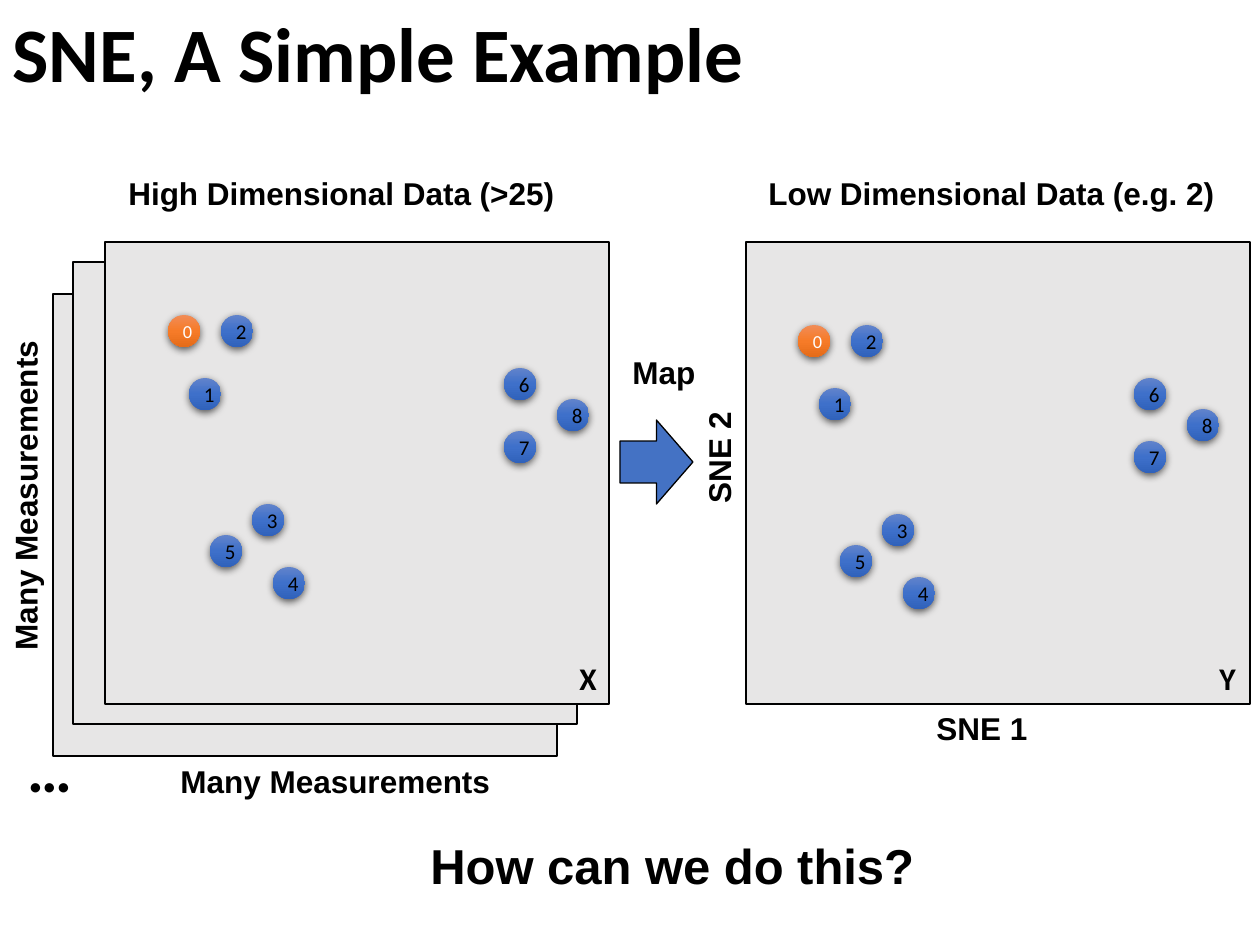
import copy

import pptx
import pptx.dml.color
import pptx.enum.shapes
import pptx.enum.text
import pptx.oxml
import pptx.oxml.ns
import pptx.util

SCALE = 914400 / 126  # EMU per px
SLIDE_SIZE = (1260, 945)

THEME = {
    "ink": "000000", "white": "FFFFFF", "panel": "E7E6E6", "arrow": "4472C4",
    "orange": ("F18C57", "F67B28", "E56C19"),
    "blue": ("6183CB", "3E70CA", "3062BB"),
    "title_size": 44, "question_size": 28, "label_size": 18, "dots_size": 36,
    "point_size": 12, "first_point_size": 10.5, "outline": 0.75,
    "heading_font": "Calibri", "label_font": "Arial",
}

TITLE = ("SNE, A Simple Example", (0, -1, 1134, 118))
PANEL_SIZE = (504, 462)
POINT_SIZE = 32
# Point label and its offset from point 0
POINTS = [
    ("0", 0, 0), ("5", 42, 220), ("2", 53, 0), ("3", 84, 189), ("4", 105, 252),
    ("6", 336, 53), ("7", 336, 116), ("8", 389, 84), ("1", 21, 63),
]
ARROW = (620, 420, 73, 84)

# Each label: text, box, rotation
LOW = {
    "panels": [(746, 242)], "first_point": (798, 325),
    "labels": [
        ("Low Dimensional Data (e.g. 2)", (756, 168, 476, 50), 0),
        ("SNE 1", (924, 703, 117, 50), 0),
        ("SNE 2", (660, 432, 117, 50), 270),
    ],
}
HIGH = {
    "panels": [(53, 294), (73, 262), (105, 242)], "first_point": (168, 315),
    "labels": [
        ("Many Measurements", (168, 756, 338, 50), 0),
        ("Many Measurements", (-144, 469, 338, 50), 270),
    ],
}
HIGH_HEADING = ("High Dimensional Data (>25)", (116, 168, 456, 50))
MAP_LABEL = ("Map", (620, 347, 89, 50))
QUESTION = ("How can we do this?", (418, 829, 515, 72))
MORE_PANELS = ("…", (15, 723, 71, 89))
PANEL_NAMES = [("X", (567, 653, 43, 50)), ("Y", (1207, 653, 42, 50))]


def emu(lengths):
    return [round(length * SCALE) for length in lengths]


def rgb(name):
    return pptx.dml.color.RGBColor.from_string(name)


def style_text(frame, size, font, color, bold):
    for run in frame.paragraphs[0].runs:
        run.font.size = pptx.util.Pt(size)
        run.font.name = font
        run.font.bold = bold
        run.font.color.rgb = rgb(color)


def add_label(shapes, text, box, rotation=0, size=THEME["label_size"],
              font=THEME["label_font"]):
    label = shapes.add_textbox(*emu(box))
    label.rotation = rotation
    frame = label.text_frame
    frame.text = text
    frame.word_wrap = False
    frame.auto_size = pptx.enum.text.MSO_AUTO_SIZE.SHAPE_TO_FIT_TEXT
    style_text(frame, size, font, THEME["ink"], True)


def add_outlined(shapes, kind, box, fill):
    outlined = shapes.add_shape(kind, *emu(box))
    outlined.shadow.inherit = False
    outlined.fill.solid()
    outlined.fill.fore_color.rgb = rgb(fill)
    outlined.line.color.rgb = rgb(THEME["ink"])
    outlined.line.width = pptx.util.Pt(THEME["outline"])


def fill_gradient(shape, colors):
    """Fill from top to bottom with evenly spaced colours."""
    shape.fill.gradient()
    shape.fill.gradient_angle = 270
    stop_list = shape._element.spPr.find(".//" + pptx.oxml.ns.qn("a:gsLst"))
    while len(stop_list) < len(colors):
        stop_list.append(copy.deepcopy(stop_list[0]))
    for index, (stop, color) in enumerate(zip(shape.fill.gradient_stops, colors)):
        stop.position = index / (len(colors) - 1)
        stop.color.rgb = rgb(color)


def add_drop_shadow(shape):
    shape.shadow.inherit = False
    effects = shape._element.spPr.find(pptx.oxml.ns.qn("a:effectLst"))
    effects.append(pptx.oxml.parse_xml(
        f'<a:outerShdw {pptx.oxml.ns.nsdecls("a")} blurRad="57150" dist="19050" '
        'dir="5400000" algn="ctr" rotWithShape="0">'
        f'<a:srgbClr val="{THEME["ink"]}"><a:alpha val="63000"/></a:srgbClr>'
        '</a:outerShdw>'))


def add_point(shapes, number, left, top):
    first = number == "0"
    point = shapes.add_shape(pptx.enum.shapes.MSO_SHAPE.OVAL,
                             *emu((left, top, POINT_SIZE, POINT_SIZE)))
    fill_gradient(point, THEME["orange" if first else "blue"])
    point.line.fill.background()
    add_drop_shadow(point)
    frame = point.text_frame
    frame.text = number
    frame.vertical_anchor = pptx.enum.text.MSO_ANCHOR.MIDDLE
    frame.paragraphs[0].alignment = pptx.enum.text.PP_ALIGN.CENTER
    style_text(frame, THEME["first_point_size" if first else "point_size"],
               THEME["heading_font"], THEME["white" if first else "ink"], False)


def add_space(shapes, space):
    """Draw one data space: its panels, points and labels."""
    for corner in space["panels"]:
        add_outlined(shapes, pptx.enum.shapes.MSO_SHAPE.RECTANGLE,
                     corner + PANEL_SIZE, THEME["panel"])
    left, top = space["first_point"]
    for number, right, down in POINTS:
        add_point(shapes, number, left + right, top + down)
    for text, box, rotation in space["labels"]:
        add_label(shapes, text, box, rotation)


def add_title(slide):
    text, box = TITLE
    title = slide.shapes.title
    title.left, title.top, title.width, title.height = emu(box)
    frame = title.text_frame
    frame.text = text
    frame.vertical_anchor = pptx.enum.text.MSO_ANCHOR.MIDDLE
    frame.paragraphs[0].alignment = pptx.enum.text.PP_ALIGN.LEFT
    frame.paragraphs[0].line_spacing = 0.9
    style_text(frame, THEME["title_size"], THEME["heading_font"], THEME["ink"], True)


def main():
    deck = pptx.Presentation()
    deck.slide_width, deck.slide_height = emu(SLIDE_SIZE)
    slide = deck.slides.add_slide(deck.slide_layouts.get_by_name("Title Only"))
    add_title(slide)
    add_label(slide.shapes, *HIGH_HEADING)
    add_space(slide.shapes.add_group_shape().shapes, LOW)

    mapping = slide.shapes.add_group_shape().shapes
    add_outlined(mapping, pptx.enum.shapes.MSO_SHAPE.RIGHT_ARROW, ARROW, THEME["arrow"])
    add_label(mapping, *MAP_LABEL)
    add_label(slide.shapes, *QUESTION, size=THEME["question_size"])

    high = slide.shapes.add_group_shape().shapes
    add_space(high, HIGH)
    add_label(high, *MORE_PANELS, size=THEME["dots_size"], font=THEME["heading_font"])
    for name, box in PANEL_NAMES:
        add_label(slide.shapes, name, box, font=THEME["heading_font"])
    deck.save("out.pptx")


if __name__ == "__main__":
    main()
